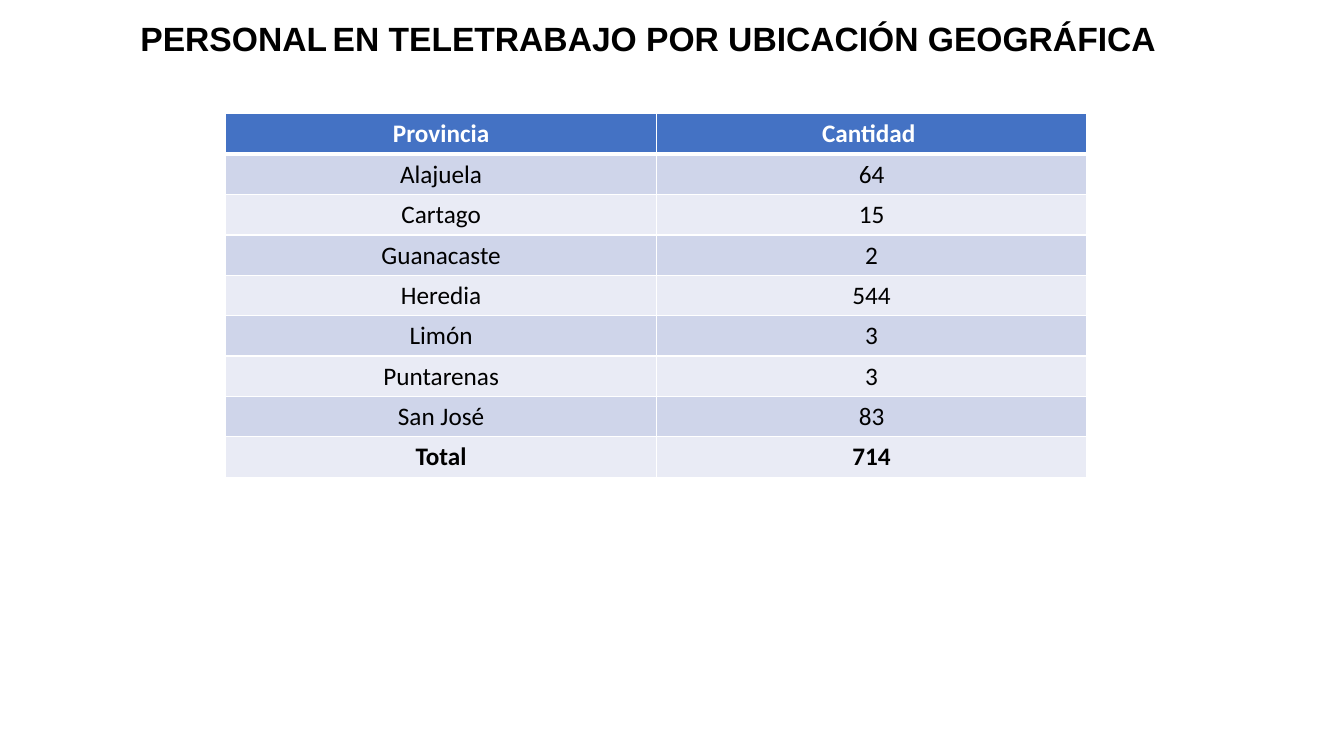
import lxml.etree
import pptx
import pptx.dml.color
import pptx.enum.text
import pptx.oxml.ns
import pptx.util

Inches = pptx.util.Inches
Pt = pptx.util.Pt
RGBColor = pptx.dml.color.RGBColor
CENTER = pptx.enum.text.PP_ALIGN.CENTER
MIDDLE = pptx.enum.text.MSO_ANCHOR.MIDDLE

BLACK = RGBColor(0x00, 0x00, 0x00)
WHITE = RGBColor(0xFF, 0xFF, 0xFF)
HEADER_BLUE = RGBColor(0x44, 0x72, 0xC4)
BAND_DARK = RGBColor(0xCF, 0xD5, 0xEA)
BAND_LIGHT = RGBColor(0xE9, 0xEB, 0xF5)

ROWS = [
    ("Provincia", "Cantidad "),
    ("Alajuela", "64"),
    ("Cartago", "15"),
    ("Guanacaste", "2"),
    ("Heredia", "544"),
    ("Limón", "3"),
    ("Puntarenas", "3"),
    ("San José", "83"),
    ("Total", "714"),
]
TITLE_RUNS = [
    ("PERSONAL", 24),
    (" ", 14),
    ("EN TELETRABAJO POR UBICACIÓN GEOGRÁFICA", 24),
]


def add_run(paragraph, text, font_name, size, color, bold):
    run = paragraph.add_run()
    run.text = text
    run.font.name = font_name
    run.font.size = Pt(size)
    run.font.color.rgb = color
    run.font.bold = bold


def add_border(cell, side, width):
    """Add a white border; call in the order L, R, T, B and before the fill."""
    properties = cell._tc.get_or_add_tcPr()
    line = lxml.etree.SubElement(properties, pptx.oxml.ns.qn(f"a:ln{side}"), w=str(Pt(width)))
    fill = lxml.etree.SubElement(line, pptx.oxml.ns.qn("a:solidFill"))
    lxml.etree.SubElement(fill, pptx.oxml.ns.qn("a:srgbClr"), val=str(WHITE))


presentation = pptx.Presentation()
presentation.slide_width = Inches(13.33)
presentation.slide_height = Inches(7.5)
slide = presentation.slides.add_slide(presentation.slide_layouts[6])

# Title
title = slide.shapes.add_textbox(Inches(0.68), Inches(0), Inches(11.5), Inches(0.81))
title.text_frame.word_wrap = True
title.text_frame.vertical_anchor = MIDDLE
paragraph = title.text_frame.paragraphs[0]
paragraph.alignment = CENTER
paragraph.line_spacing = 0.9
for text, size in TITLE_RUNS:
    add_run(paragraph, text, "Arial", size, BLACK, True)

# Staff by province
table = slide.shapes.add_table(
    len(ROWS), 2, Inches(2.24), Inches(1.13), Inches(8.54), Inches(3.6)
).table
last_row = len(ROWS) - 1
for row_index, values in enumerate(ROWS):
    is_header = row_index == 0
    if is_header:
        fill_color = HEADER_BLUE
    else:
        fill_color = BAND_DARK if row_index % 2 else BAND_LIGHT
    border_widths = {
        "L": 1,
        "R": 1,
        "T": 3 if row_index == 1 else 1,
        "B": 3 if is_header else 1,
    }
    for column_index, value in enumerate(values):
        cell = table.cell(row_index, column_index)
        for side, width in border_widths.items():
            add_border(cell, side, width)
        cell.fill.solid()
        cell.fill.fore_color.rgb = fill_color
        paragraph = cell.text_frame.paragraphs[0]
        paragraph.alignment = CENTER
        add_run(paragraph, value, "Calibri", 18,
                WHITE if is_header else BLACK, row_index in (0, last_row))

presentation.save("out.pptx")
